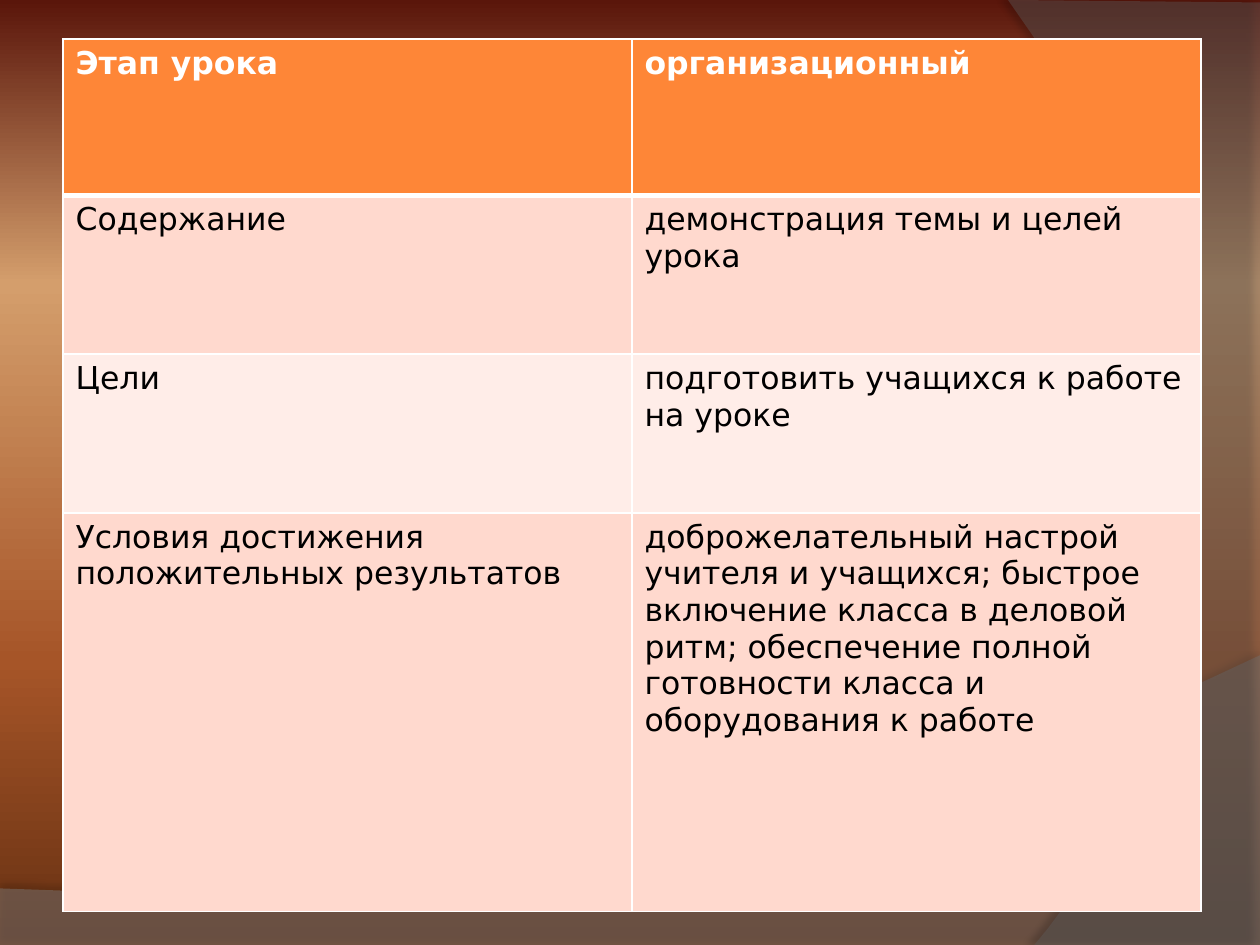
from lxml import etree
from pptx import Presentation
from pptx.dml.color import RGBColor as Rgb
from pptx.oxml import parse_xml as to_xml
from pptx.oxml.ns import nsdecls as decls, qn
from pptx.util import Cm, Pt

WHITE = Rgb(0xFF, 0xFF, 0xFF)
BLACK = Rgb(0, 0, 0)
ORANGE = Rgb(0xFE, 0x86, 0x37)
PEACH = Rgb(0xFF, 0xD9, 0xCE)
PALE = Rgb(0xFF, 0xED, 0xE8)
GREY = Rgb(0x7F, 0x7F, 0x7F)
SLATE = Rgb(0x5E, 0x5E, 0x5E)
STOPS = [
    (0, Rgb(0x5A, 0x16, 0x0B)),
    (30, Rgb(0xD4, 0x9E, 0x6C)),
    (70, Rgb(0xA6, 0x55, 0x28)),
    (100, Rgb(0x66, 0x30, 0x12)),
]

HEAD = {"name": "DejaVu Sans", "size": Pt(18), "bold": True}
BODY = {"name": "DejaVu Sans", "size": Pt(18), "bold": False}
ROWS = [
    ("Этап урока", "организационный"),
    ("Содержание", "демонстрация темы и целей урока"),
    ("Цели", "подготовить учащихся к работе на уроке"),
    (
        "Условия достижения положительных результатов",
        "доброжелательный настрой учителя и учащихся; быстрое включение класса "
        "в деловой ритм; обеспечение полной готовности класса и оборудования к работе",
    ),
]
TALL = [3.15, 3.2, 3.2, 8.03]
FILLS = [ORANGE, PEACH, PALE, PEACH]


def add_back(slide):
    stops = "".join(
        f'<a:gs pos="{pos * 1000}"><a:srgbClr val="{color}"/></a:gs>'
        for pos, color in STOPS
    )
    slide.element.cSld.insert(0, to_xml(
        f'<p:bg {decls("p", "a")}><p:bgPr><a:gradFill rotWithShape="1">'
        f'<a:gsLst>{stops}</a:gsLst><a:lin ang="5400000" scaled="0"/>'
        "</a:gradFill><a:effectLst/></p:bgPr></p:bg>"
    ))


def curve(start, pull, push, end, count=32):
    for step in range(1, count + 1):
        t = step / count
        u = 1 - t
        yield tuple(
            u**3 * a + 3 * u * u * t * b + 3 * u * t * t * c + t**3 * d
            for a, b, c, d in zip(start, pull, push, end)
        )


def add_wave(slide, left, top, edge, bend, color, alpha, shade):
    points = [
        (Cm(left + x), Cm(top + y))
        for x, y in [*edge, *curve(edge[-1], *bend)]
    ]
    form = slide.shapes.build_freeform(*points[0])
    form.add_line_segments(points[1:], close=True)
    wave = form.convert_to_shape()
    wave.line.fill.background()
    wave.fill.solid()
    wave.fill.fore_color.rgb = color
    tint = wave.element.spPr.find(".//" + qn("a:solidFill") + "/" + qn("a:srgbClr"))
    etree.SubElement(tint, qn("a:alpha"), val=str(alpha * 1000))
    blur, dist, angle, dark = shade
    wave.element.spPr.append(to_xml(
        f'<a:effectLst {decls("a")}><a:outerShdw blurRad="{Pt(blur)}" '
        f'dist="{Pt(dist)}" dir="{angle * 60000}" algn="ctr" rotWithShape="0">'
        f'<a:srgbClr val="{BLACK}"><a:alpha val="{dark * 1000}"/></a:srgbClr>'
        "</a:outerShdw></a:effectLst>"
    ))


def set_edges(cell, top, bottom):
    props = cell._tc.get_or_add_tcPr()
    for side, width in zip("LRTB", (1, 1, top, bottom)):
        props.append(to_xml(
            f'<a:ln{side} {decls("a")} w="{Pt(width)}"><a:solidFill>'
            f'<a:srgbClr val="{WHITE}"/></a:solidFill></a:ln{side}>'
        ))


def add_stage(slide, left, top, width):
    frame = slide.shapes.add_table(
        len(ROWS), 2, Cm(left), Cm(top), Cm(width), Cm(sum(TALL))
    )
    table = frame.table
    for col in table.columns:
        col.width = Cm(width / 2)
    for i, texts in enumerate(ROWS):
        table.rows[i].height = Cm(TALL[i])
        for j, text in enumerate(texts):
            cell = table.cell(i, j)
            set_edges(cell, 3 if i == 1 else 1, 3 if i == 0 else 1)
            cell.fill.solid()
            cell.fill.fore_color.rgb = FILLS[i]
            cell.text = text
            font = cell.text_frame.paragraphs[0].runs[0].font
            for key, value in (BODY if i else HEAD).items():
                setattr(font, key, value)
            font.color.rgb = BLACK if i else WHITE


def main():
    deck = Presentation()
    deck.slide_width, deck.slide_height = Cm(25.4), Cm(19.05)
    slide = deck.slides.add_slide(deck.slide_layouts[6])
    add_back(slide)
    add_wave(
        slide, 0, 13.21,
        [(0, 4.7), (0, 5.87), (25.4, 5.87), (25.4, 0)],
        [(14.2, 5.31), (9.93, 5.05), (0, 4.7)],
        GREY, 45, (4, 3.5, 270, 35),
    )
    add_wave(
        slide, 20.32, 0,
        [(0, 0), (5.08, 0.05), (5.08, 19.05), (0.53, 19.05)],
        [(3.43, 15.72), (5.54, 7.62), (0, 0)],
        SLATE, 40, (4, 4, 180, 45),
    )
    add_stage(slide, 1.27, 0.79, 22.94)
    deck.save("out.pptx")


if __name__ == "__main__":
    main()
